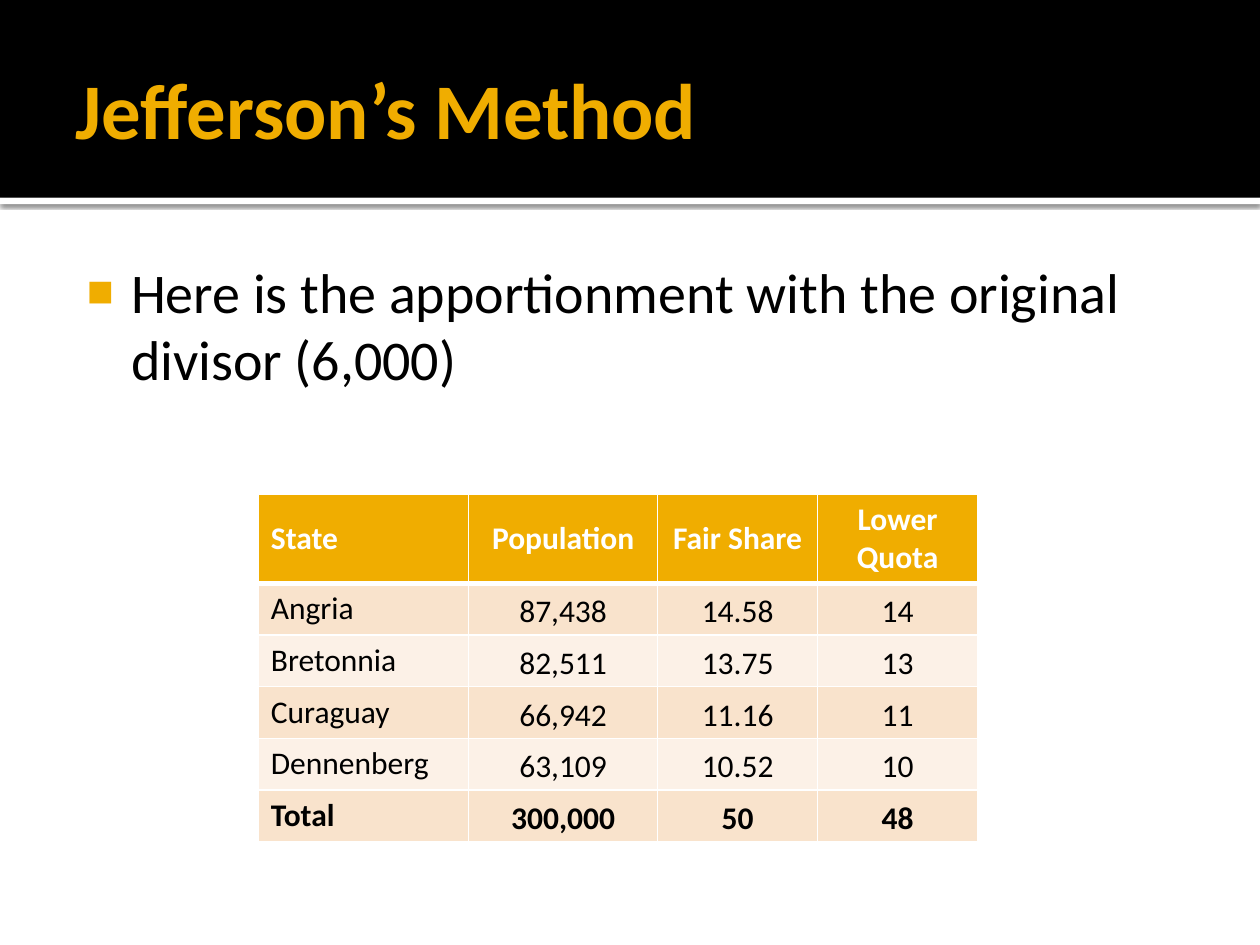
from lxml import etree
from pptx import Presentation
from pptx.dml.color import RGBColor
from pptx.enum.shapes import MSO_SHAPE
from pptx.enum.text import MSO_ANCHOR, MSO_AUTO_SIZE, PP_ALIGN
from pptx.oxml import parse_xml
from pptx.oxml.ns import nsdecls, qn
from pptx.util import Inches, Pt

RECT = MSO_SHAPE.RECTANGLE
MIDDLE, TOP = MSO_ANCHOR.MIDDLE, MSO_ANCHOR.TOP
LEFT, CENTER = PP_ALIGN.LEFT, PP_ALIGN.CENTER
FIXED = MSO_AUTO_SIZE.NONE

FONT = "Calibri"
GOLD, WHITE, BLACK = "F0AD00", "FFFFFF", "000000"
BANDS = ["F9E3CC", "FCF1E7"]

ROWS = [
    ["State", "Population", "Fair Share", "Lower Quota"],
    ["Angria", "87,438", "14.58", "14"],
    ["Bretonnia", "82,511", "13.75", "13"],
    ["Curaguay", "66,942", "11.16", "11"],
    ["Dennenberg", "63,109", "10.52", "10"],
    ["Total", "300,000", "50", "48"],
]
WIDTHS = [1.67, 1.5, 1.27, 1.27]
HEIGHTS = [0.7] + [0.41] * 5


def color(code):
    return RGBColor.from_string(code)


def inset(item, left, top, right, bottom):
    """Set the margins of a text frame or a table cell."""
    item.margin_left, item.margin_top = Inches(left), Inches(top)
    item.margin_right, item.margin_bottom = Inches(right), Inches(bottom)


class Deck:
    """Holds the style and the current slide."""

    def __init__(self):
        self.prs = Presentation()
        self.prs.slide_width, self.prs.slide_height = Inches(10), Inches(7.5)
        self.slide = self.prs.slides.add_slide(self.prs.slide_layouts[1])
        self.bars = 0

    def style(self, para, size, code, bold=False):
        for run in para.runs:
            font = run.font
            font.name, font.size, font.bold = FONT, Pt(size), bold
            font.color.rgb = color(code)

    def bar(self, top, height, code, shadow=False):
        """Draw a full-width band behind the placeholders."""
        shape = self.slide.shapes.add_shape(
            RECT, 0, Inches(top), self.prs.slide_width, Inches(height))
        shape.shadow.inherit = False
        shape.fill.solid()
        shape.fill.fore_color.rgb = color(code)
        shape.line.fill.background()
        if shadow:
            effects = shape._element.spPr.find(qn("a:effectLst"))
            effects.append(parse_xml(
                f'<a:outerShdw {nsdecls("a")} blurRad="{Pt(2.5)}" '
                f'dist="{Pt(0.8)}" dir="5400000" rotWithShape="0">'
                f'<a:srgbClr val="{BLACK}"><a:alpha val="60000"/>'
                '</a:srgbClr></a:outerShdw>'))
        self.slide.shapes._spTree.insert(2 + self.bars, shape._element)
        self.bars += 1

    def fill(self, holder, box, text, anchor, margins):
        """Place a placeholder, write its text and return the paragraph."""
        holder.left, holder.top, holder.width, holder.height = map(Inches, box)
        frame = holder.text_frame
        frame.text = text
        frame.word_wrap, frame.auto_size = True, FIXED
        frame.vertical_anchor = anchor
        inset(frame, *margins)
        para = frame.paragraphs[0]
        para.alignment, para.space_before = LEFT, Pt(0)
        return para

    def title(self, text):
        para = self.fill(self.slide.shapes.title, (0.5, 0.17, 9, 1.37), text,
                         MIDDLE, (0.1, 0.05, 0.05, 0.05))
        self.style(para, 45, GOLD, True)

    def body(self, text):
        para = self.fill(self.slide.placeholders[1], (0.5, 1.94, 9, 5.06),
                         text, TOP, (0.06, 0.1, 0.1, 0.05))
        props = para._p.get_or_add_pPr()
        props.set("marL", str(Inches(0.48)))
        props.set("indent", str(Inches(-0.35)))
        tint = etree.SubElement(props, qn("a:buClr"))
        etree.SubElement(tint, qn("a:srgbClr"), val=GOLD)
        etree.SubElement(props, qn("a:buSzPct"), val="80000")
        etree.SubElement(props, qn("a:buFont"), typeface="Arial")
        etree.SubElement(props, qn("a:buChar"), char="■")
        self.style(para, 32, BLACK)

    def edges(self, cell, bottom, top):
        """Draw white cell borders, given the two horizontal widths."""
        props = cell._tc.get_or_add_tcPr()
        sides = {"L": 1, "R": 1, "T": top, "B": bottom}
        for spot, (side, width) in enumerate(sides.items()):
            props.insert(spot, parse_xml(
                f'<a:ln{side} {nsdecls("a")} w="{Pt(width)}"><a:solidFill>'
                f'<a:srgbClr val="{WHITE}"/></a:solidFill></a:ln{side}>'))

    def cell(self, cell, text, row, col):
        head, total = row == 0, row == len(ROWS) - 1
        cell.text = text
        cell.fill.solid()
        cell.fill.fore_color.rgb = color(GOLD if head else BANDS[(row - 1) % 2])
        cell.vertical_anchor = MIDDLE if head or col else TOP
        para = cell.text_frame.paragraphs[0]
        para.alignment = CENTER if col else LEFT
        if col and not head:
            inset(cell, 0.07, 0, 0.07, 0)
            para.line_spacing = 1.15
        self.style(para, 18, WHITE if head else BLACK, head or total)
        self.edges(cell, 3 if head else 1, 3 if row == 1 else 1)

    def table(self, left, top):
        frame = self.slide.shapes.add_table(
            len(ROWS), len(WIDTHS), Inches(left), Inches(top),
            Inches(sum(WIDTHS)), Inches(sum(HEIGHTS)))
        grid = frame.table
        for col, width in zip(grid.columns, WIDTHS):
            col.width = Inches(width)
        for row, height in zip(grid.rows, HEIGHTS):
            row.height = Inches(height)
        for row, texts in enumerate(ROWS):
            for col, text in enumerate(texts):
                self.cell(grid.cell(row, col), text, row, col)


def main():
    deck = Deck()
    deck.bar(1.57, 0.05, WHITE, shadow=True)
    deck.bar(0, 1.57, BLACK)
    deck.title("Jefferson’s Method")
    deck.body("Here is the apportionment with the original divisor (6,000)")
    deck.table(2.05, 3.92)
    deck.prs.save("out.pptx")


if __name__ == "__main__":
    main()
